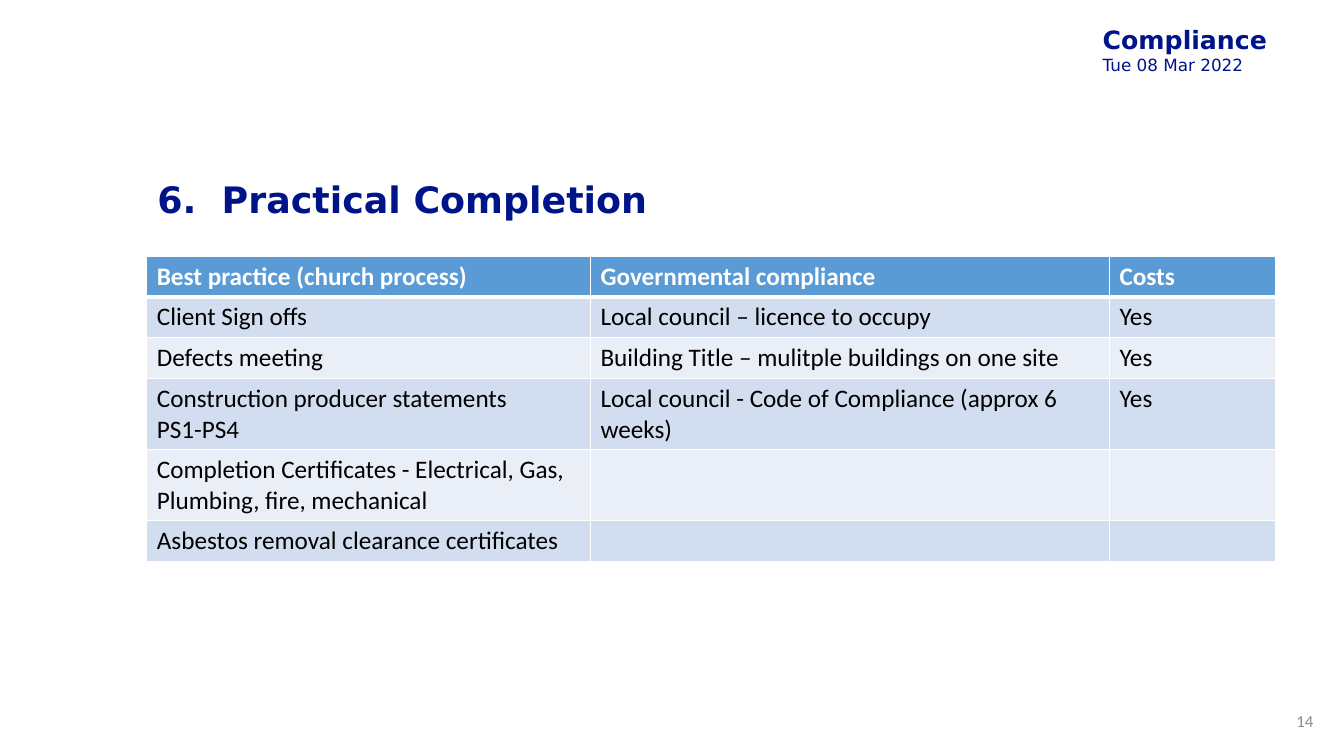
from lxml import etree
from pptx import Presentation
from pptx.dml.color import RGBColor
from pptx.enum import text
from pptx.oxml import ns
from pptx.util import Cm, Pt

COLOURS = {
    "navy": "001489",
    "header": "5B9BD5",
    "odd_row": "D2DEEF",
    "even_row": "EAEFF7",
    "white": "FFFFFF",
    "black": "000000",
    "grey": "8C8C8C",
}
HEADING_FONT = "DejaVu Sans"
BODY_FONT = "Calibri"
STEPS = [
    ("Best practice (church process)", "Governmental compliance", "Costs"),
    ("Client Sign offs", "Local council – licence to occupy", "Yes"),
    ("Defects meeting", "Building Title – mulitple buildings on one site", "Yes"),
    ("Construction producer statements\nPS1-PS4",
     "Local council - Code of Compliance (approx 6 weeks)", "Yes"),
    ("Completion Certificates - Electrical, Gas, Plumbing, fire, mechanical", "", ""),
    ("Asbestos removal clearance certificates", "", ""),
]
COLUMN_WIDTHS = (11.18, 13.08, 4.19)
ROW_HEIGHTS = (1.03, 1.03, 1.03, 1.79, 1.79, 1.03)


def place(shape, left, top, width, height):
    """Set a shape's position and size in centimetres."""
    shape.left, shape.top = Cm(left), Cm(top)
    shape.width, shape.height = Cm(width), Cm(height)


def style(paragraph, name, size, colour, bold=False):
    """Format every run of a paragraph."""
    for run in paragraph.runs:
        run.font.name = name
        run.font.size = Pt(size)
        run.font.bold = bold
        run.font.color.rgb = RGBColor.from_string(COLOURS[colour])


def add_title(slide, wording):
    """Fill and format the title placeholder."""
    title = slide.shapes.title
    place(title, 3.71, 3.81, 28.45, 2.57)
    frame = title.text_frame
    frame.text = wording
    frame.vertical_anchor = text.MSO_ANCHOR.MIDDLE
    heading = frame.paragraphs[0]
    heading.alignment = text.PP_ALIGN.LEFT
    heading.line_spacing = 0.9
    style(heading, HEADING_FONT, 26, "navy", True)


def add_meeting(slide, topic, date):
    """Add the topic and date of the meeting in the top corner."""
    meeting = slide.shapes.add_textbox(Cm(27.61), Cm(0.51), Cm(4.55), Cm(2.24))
    frame = meeting.text_frame
    frame.word_wrap = False
    frame.margin_left = frame.margin_right = Cm(0.18)
    frame.margin_top = frame.margin_bottom = Cm(0.1)
    frame.text = f"{topic}\n{date}"
    style(frame.paragraphs[0], HEADING_FONT, 18, "navy", True)
    style(frame.paragraphs[1], HEADING_FONT, 12, "navy")


def add_page_number(slide, number):
    """Add the page number in the bottom corner."""
    page = slide.shapes.add_textbox(Cm(32.28), Cm(17.65), Cm(1.07), Cm(1.02))
    frame = page.text_frame
    frame.word_wrap = True
    frame.vertical_anchor = text.MSO_ANCHOR.MIDDLE
    frame.text = number
    frame.paragraphs[0].alignment = text.PP_ALIGN.RIGHT
    style(frame.paragraphs[0], BODY_FONT, 12, "grey")


def add_border(cell, side, points):
    """Draw one white border of a table cell."""
    properties = cell._tc.get_or_add_tcPr()
    line = etree.SubElement(properties, ns.qn(f"a:ln{side}"), w=str(Pt(points)))
    fill = etree.SubElement(line, ns.qn("a:solidFill"))
    etree.SubElement(fill, ns.qn("a:srgbClr"), val=COLOURS["white"])


def format_cell(cell, row):
    """Give a cell the borders, fill and font of its row."""
    for side in "LRTB":
        thick = (row, side) in ((0, "B"), (1, "T"))
        add_border(cell, side, 3 if thick else 1)
    band = "header" if row == 0 else "odd_row" if row % 2 else "even_row"
    cell.fill.solid()
    cell.fill.fore_color.rgb = RGBColor.from_string(COLOURS[band])
    for paragraph in cell.text_frame.paragraphs:
        style(paragraph, BODY_FONT, 18, "black" if row else "white", row == 0)


def add_steps(slide):
    """Add the table of completion steps."""
    steps = slide.shapes.add_table(
        len(STEPS), len(COLUMN_WIDTHS), Cm(3.7), Cm(6.45),
        Cm(sum(COLUMN_WIDTHS)), Cm(sum(ROW_HEIGHTS))).table
    for column, width in zip(steps.columns, COLUMN_WIDTHS):
        column.width = Cm(width)
    for row, (entries, height) in enumerate(zip(STEPS, ROW_HEIGHTS)):
        steps.rows[row].height = Cm(height)
        for column, entry in enumerate(entries):
            cell = steps.cell(row, column)
            cell.text_frame.text = entry
            format_cell(cell, row)


def main():
    """Build the practical completion slide."""
    deck = Presentation()
    deck.slide_width, deck.slide_height = Cm(33.87), Cm(19.05)
    slide = deck.slides.add_slide(deck.slide_layouts.get_by_name("Title Only"))
    add_meeting(slide, "Compliance", "Tue 08 Mar 2022")
    add_title(slide, "6.  Practical Completion")
    add_steps(slide)
    add_page_number(slide, "14")
    deck.save("out.pptx")


if __name__ == "__main__":
    main()
